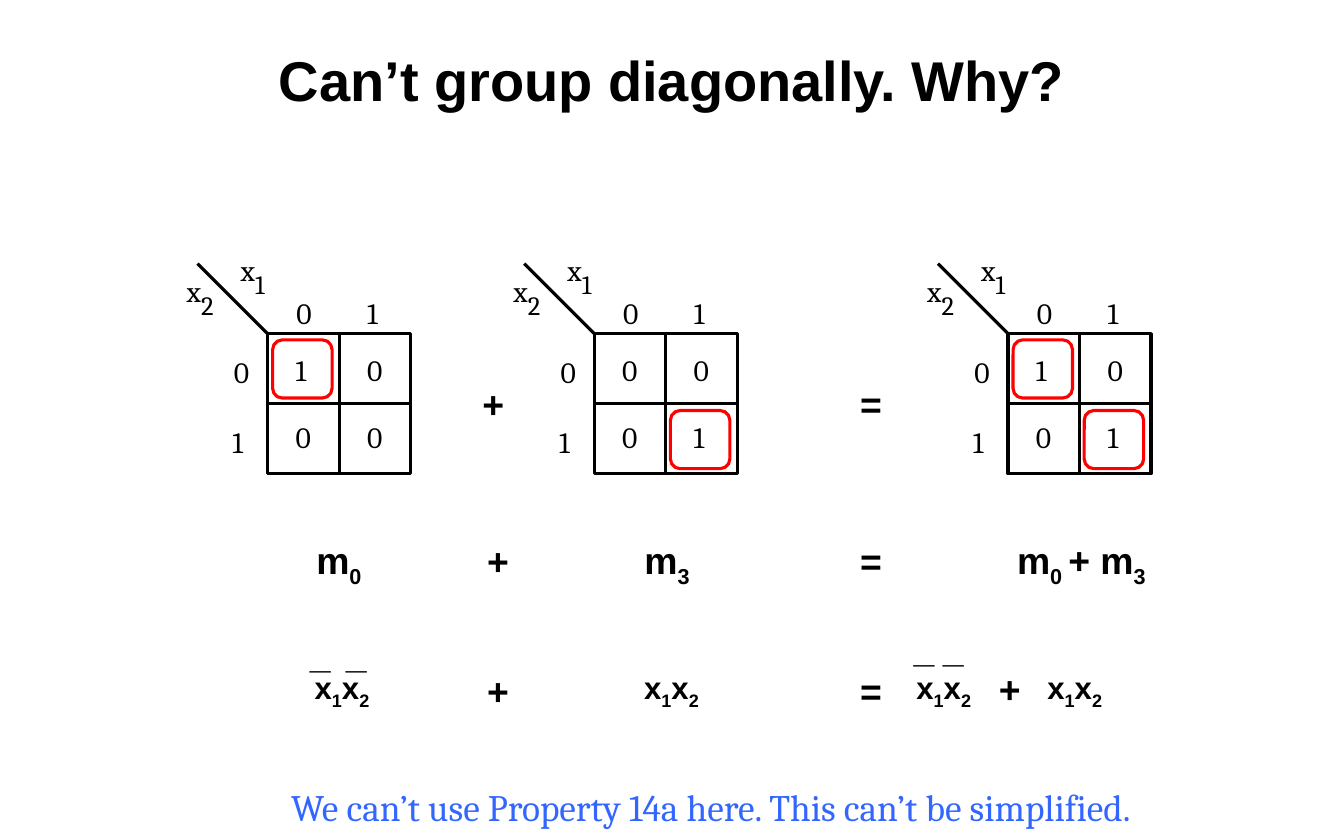
from dataclasses import dataclass

from lxml.etree import SubElement
from pptx import Presentation
from pptx.dml.color import RGBColor
from pptx.enum.shapes import MSO_CONNECTOR, MSO_SHAPE
from pptx.enum.text import MSO_ANCHOR, MSO_AUTO_SIZE, PP_ALIGN
from pptx.oxml.ns import qn
from pptx.util import Pt


@dataclass(frozen=True)
class Theme:
    ink: RGBColor = RGBColor(0, 0, 0)
    paper: RGBColor = RGBColor(255, 255, 255)
    ring: RGBColor = RGBColor(255, 0, 0)
    remark: RGBColor = RGBColor(0x33, 0x66, 0xFF)
    bold_font: str = "Arial"
    map_font: str = "Cambria"
    title_size: float = 36
    term_size: float = 24
    product_size: float = 20
    digit_size: float = 19
    index_size: float = 17
    line: float = 2


class SlideBuilder:
    def __init__(self, slide, theme):
        self.slide = slide
        self.theme = theme

    def style_run(self, run, size, bold=True, color=None):
        run.font.size = Pt(size)
        run.font.bold = bold
        run.font.name = self.theme.bold_font if bold else self.theme.map_font
        run.font.color.rgb = color or self.theme.ink

    def text_box(self, left, top, width, height, wrap=True, inset=True, grow=True):
        box = self.slide.shapes.add_textbox(Pt(left), Pt(top), Pt(width), Pt(height))
        frame = box.text_frame
        frame.word_wrap = wrap
        frame.auto_size = MSO_AUTO_SIZE.SHAPE_TO_FIT_TEXT if grow else MSO_AUTO_SIZE.NONE
        if not inset:
            frame.margin_left = frame.margin_right = 0
            frame.margin_top = frame.margin_bottom = 0
        return frame

    def title(self, text):
        frame = self.text_box(0, 24, 864, 54, grow=False)
        frame.vertical_anchor = MSO_ANCHOR.MIDDLE
        frame.text = text
        frame.paragraphs[0].alignment = PP_ALIGN.CENTER
        self.style_run(frame.paragraphs[0].runs[0], self.theme.title_size)

    def label(self, text, left, top, size=None, width=14.4):
        frame = self.text_box(left, top, width, 23, wrap=False, inset=False)
        frame.text = text
        self.style_run(frame.paragraphs[0].runs[0], size or self.theme.digit_size, False)

    def variable(self, index, left, top):
        self.label("x", left, top)
        self.label(index, left + 9.3, top + 10, self.theme.index_size, 13)

    def symbol(self, text, left, top, width=21):
        frame = self.text_box(left, top, width, 36.5)
        frame.text = text
        self.style_run(frame.paragraphs[0].runs[0], self.theme.term_size)

    def expression(self, parts, left, top, size):
        """Every second part is a subscript."""
        paragraph = self.text_box(left, top, 121.7, size * 1.55).paragraphs[0]
        paragraph.alignment = PP_ALIGN.CENTER
        for position, part in enumerate(parts):
            run = paragraph.add_run()
            run.text = part
            self.style_run(run, size)
            if position % 2:
                run.font._element.set("baseline", "-25000")

    def remark(self, text, left, top, width):
        frame = self.text_box(left, top, width, 36.5, wrap=False)
        frame.text = text
        self.style_run(frame.paragraphs[0].runs[0], self.theme.term_size, False,
                       self.theme.remark)

    def outline(self, preset, left, top, width, height, color, filled=False):
        shape = self.slide.shapes.add_shape(preset, Pt(left), Pt(top), Pt(width), Pt(height))
        shape.shadow.inherit = False
        if filled:
            shape.fill.solid()
            shape.fill.fore_color.rgb = self.theme.paper
        else:
            shape.fill.background()
        shape.line.color.rgb = color
        shape.line.width = Pt(self.theme.line)
        return shape

    def line(self, start=(0, 0), end=(0, 0)):
        line = self.slide.shapes.add_connector(
            MSO_CONNECTOR.STRAIGHT, *(Pt(value) for value in (*start, *end)))
        line.line.color.rgb = self.theme.ink
        line.line.width = Pt(self.theme.line)
        SubElement(line._element.spPr, qn("a:effectLst"))
        return line

    def karnaugh_map(self, left, top, values):
        # Frame, dividers and corner stroke
        frame = self.outline(MSO_SHAPE.RECTANGLE, left, top, 92, 90, self.theme.ink, True)
        for first_side, last_side in ((3, 1), (2, 0)):
            divider = self.line()
            divider.begin_connect(frame, first_side)
            divider.end_connect(frame, last_side)
        self.line((left - 45, top - 45), (left, top))

        # Variables and their values along the edges
        self.variable("2", left - 52, top - 39)
        self.variable("1", left - 17.3, top - 52.5)
        for step, digit in enumerate("01"):
            self.label(digit, left - 21.6 - step, top + 13 + 45 * step)
            self.label(digit, left + 18.6 + 45.5 * step, top - 25.2)

        # Cell values, with a ring around each 1
        for row, digits in enumerate(values):
            for column, digit in enumerate(digits):
                self.label(digit, left + 18 + 46 * column, top + 11.5 + 43 * row, width=9.4)
                if digit == "1":
                    self.outline(MSO_SHAPE.ROUNDED_RECTANGLE, left + 3.3 + 45.7 * column,
                                 top + 4 + 45.4 * row, 38.2, 37.4, self.theme.ring)


def main():
    presentation = Presentation()
    presentation.slide_width, presentation.slide_height = Pt(864), Pt(540)
    theme = Theme()
    builder = SlideBuilder(
        presentation.slides.add_slide(presentation.slide_layouts[6]), theme)

    builder.title("Can’t group diagonally. Why?")

    # Karnaugh maps
    for left, values in ((172, ("10", "00")), (382, ("00", "01")), (648, ("10", "01"))):
        builder.karnaugh_map(left, 214.5, values)

    # Operators between the three columns
    for plus_left, top in ((303, 241.2), (306, 342.7), (306, 426.2)):
        builder.symbol("+", plus_left, top)
        builder.symbol("=", 545.8, top)

    # Minterms
    for left, parts in ((157, ("m", "0")), (368, ("m", "3")),
                        (634.3, ("m", "0 ", "+ m", "3"))):
        builder.expression(parts, left, 342, theme.term_size)

    # Products, with bars over the complemented variables
    for left in (159, 370.8, 545.8, 630):
        builder.expression(("x", "1", "x", "2"), left, 426.2, theme.product_size)
    builder.symbol("+", 635, 424.8)
    for left, top in ((192.2, 402.5), (215.3, 402.5), (580.3, 398.2), (599, 398.2)):
        builder.symbol("_", left, top, 25.2)

    builder.remark("We can’t use Property 14a here. This can’t be simplified.", 180, 500.4, 561)

    presentation.save("out.pptx")


if __name__ == "__main__":
    main()
